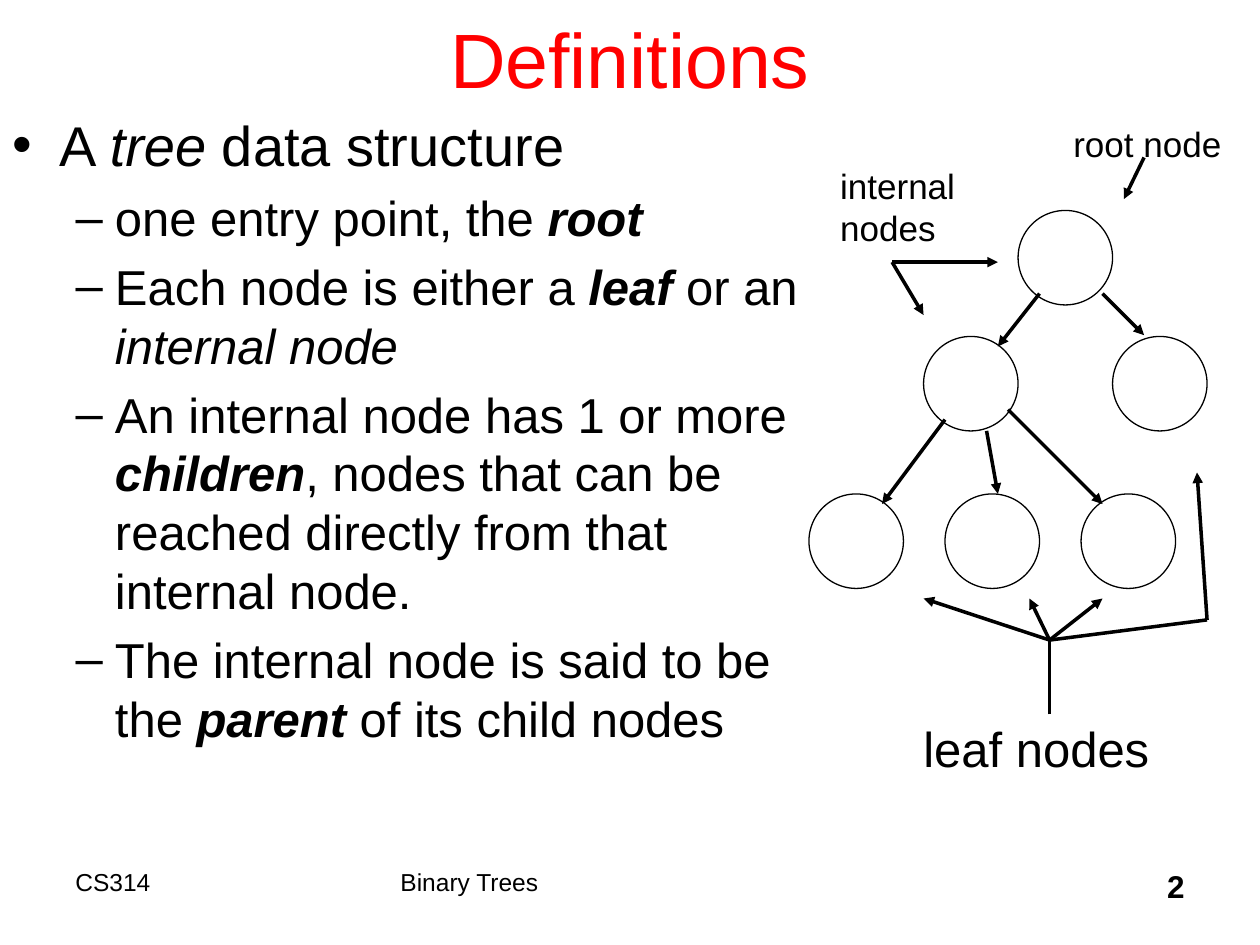
from lxml import etree
from pptx import Presentation
from pptx.dml.color import RGBColor
from pptx.enum.shapes import MSO_CONNECTOR, MSO_SHAPE
from pptx.enum.text import MSO_ANCHOR, MSO_AUTO_SIZE, PP_ALIGN
from pptx.oxml.ns import qn
from pptx.util import Inches, Pt

LEFT, CENTER, RIGHT = PP_ALIGN.LEFT, PP_ALIGN.CENTER, PP_ALIGN.RIGHT
MIDDLE, TOP = MSO_ANCHOR.MIDDLE, MSO_ANCHOR.TOP
NO_FIT = MSO_AUTO_SIZE.NONE
OVAL, STRAIGHT = MSO_SHAPE.OVAL, MSO_CONNECTOR.STRAIGHT

COLORS = {"title": "FF0000", "ink": "000000"}
FONT = "Arial"
LEVEL_SIZES = [32, 28]
NODE_SIZE = 0.75

TITLE = "Definitions"
BULLETS = [
    (0, [("A ", ""), ("tree ", "i"), ("data structure", "")]),
    (1, [("one entry point, the ", ""), ("root", "bi")]),
    (1, [("Each node is either a ", ""), ("leaf", "bi"), (" or an ", ""),
         ("internal node", "i")]),
    (1, [("An internal node has 1 or more ", ""), ("children", "bi"),
         (", nodes that can be reached directly from that internal node.", "")]),
    (1, [("The internal node is said to be the ", ""), ("parent", "bi"),
         (" of its child nodes", "")]),
]
TREE_ROWS = [
    (1.67, [8.08]),
    (2.67, [7.33, 8.83]),
    (3.92, [6.42, 7.5, 8.58]),
]
LEAF_HUB, LEAF_CORNER, INTERNAL_HUB = (8.33, 5.08), (9.58, 4.92), (7.08, 2.08)
ARROWS = [
    ((8.25, 2.33), (7.92, 2.75)),
    ((8.75, 2.33), (9.08, 2.66)),
    ((7.5, 3.33), (7, 4)),
    ((7.83, 3.42), (7.92, 3.92)),
    ((8, 3.25), (8.75, 4)),
    (LEAF_HUB, (7.33, 4.75)),
    (LEAF_HUB, (8.17, 4.75)),
    (LEAF_HUB, (8.75, 4.75)),
    (LEAF_CORNER, (9.5, 3.75)),
    ((9.08, 1.25), (8.92, 1.58)),
    (INTERNAL_HUB, (7.33, 2.5)),
    (INTERNAL_HUB, (7.92, 2.08)),
]
PLAIN_LINES = [((8.33, 5.67), LEAF_HUB), (LEAF_HUB, LEAF_CORNER)]
LABELS = [
    ("root node", (8.42, 0.92, 1.45, 0.43), 20),
    ("leaf nodes", (7.23, 5.65, 2, 0.57), 28),
    ("internal\vnodes", (6.57, 1.26, 1.2, 0.77), 20),
]
FOOTERS = [
    ("CS314", (0.5, 6.83, 2.5, 0.5), 14, LEFT, False),
    ("Binary Trees", (3.08, 6.83, 3.83, 0.5), 14, LEFT, False),
    ("2", (7.42, 6.83, 2.08, 0.5), 18, RIGHT, True),
]


def rgb(name):
    return RGBColor.from_string(COLORS[name])


def format_span(span, size, color="ink", **extra):
    span.font.color.rgb = rgb(color)
    for name, value in {"name": FONT, "size": Pt(size), **extra}.items():
        setattr(span.font, name, value)


def place(shape, area):
    for name, value in zip(("left", "top", "width", "height"), area):
        setattr(shape, name, Inches(value))


def add_text(slide, text, area, size, align=LEFT, bold=False):
    box = slide.shapes.add_textbox(*map(Inches, area))
    frame = box.text_frame
    frame.word_wrap = True
    frame.text = text
    para = frame.paragraphs[0]
    para.alignment = align
    for span in para.runs:
        format_span(span, size, bold=bold)


def add_line(slide, start, end, arrow):
    line = slide.shapes.add_connector(STRAIGHT, *map(Inches, start + end))
    line.line.color.rgb = rgb("ink")
    line.line.width = Pt(2)
    if arrow:
        etree.SubElement(line.line._get_or_add_ln(), qn("a:tailEnd"), type="triangle")
    etree.SubElement(line._element.spPr, qn("a:effectLst"))


def add_title(slide):
    title = slide.shapes.title
    place(title, (0.75, -0.17, 8.5, 1.25))
    frame = title.text_frame
    frame.auto_size, frame.vertical_anchor = NO_FIT, MIDDLE
    frame.text = TITLE
    para = frame.paragraphs[0]
    para.alignment = CENTER
    format_span(para.runs[0], 44, "title")


def add_bullets(slide):
    body = slide.placeholders[1]
    place(body, (0, 0.83, 6.57, 6))
    frame = body.text_frame
    frame.auto_size, frame.vertical_anchor = NO_FIT, TOP
    for index, (level, spans) in enumerate(BULLETS):
        para = frame.add_paragraph() if index else frame.paragraphs[0]
        para.level = level
        for text, style in spans:
            span = para.add_run()
            span.text = text
            format_span(span, LEVEL_SIZES[level], bold="b" in style, italic="i" in style)


def add_tree(slide):
    for top, lefts in TREE_ROWS:
        for left in lefts:
            area = (left, top, NODE_SIZE, NODE_SIZE)
            node = slide.shapes.add_shape(OVAL, *map(Inches, area))
            node.shadow.inherit = False
            node.fill.background()
            node.line.color.rgb = rgb("ink")
            node.line.width = Pt(0.75)
    for lines, arrow in ((ARROWS, True), (PLAIN_LINES, False)):
        for start, end in lines:
            add_line(slide, start, end, arrow)
    for label in LABELS:
        add_text(slide, *label)


def main():
    deck = Presentation()
    deck.slide_width, deck.slide_height = Inches(10), Inches(7.5)
    slide = deck.slides.add_slide(deck.slide_layouts[1])
    add_title(slide)
    add_bullets(slide)
    add_tree(slide)
    for footer in FOOTERS:
        add_text(slide, *footer)
    deck.save("out.pptx")


if __name__ == "__main__":
    main()
